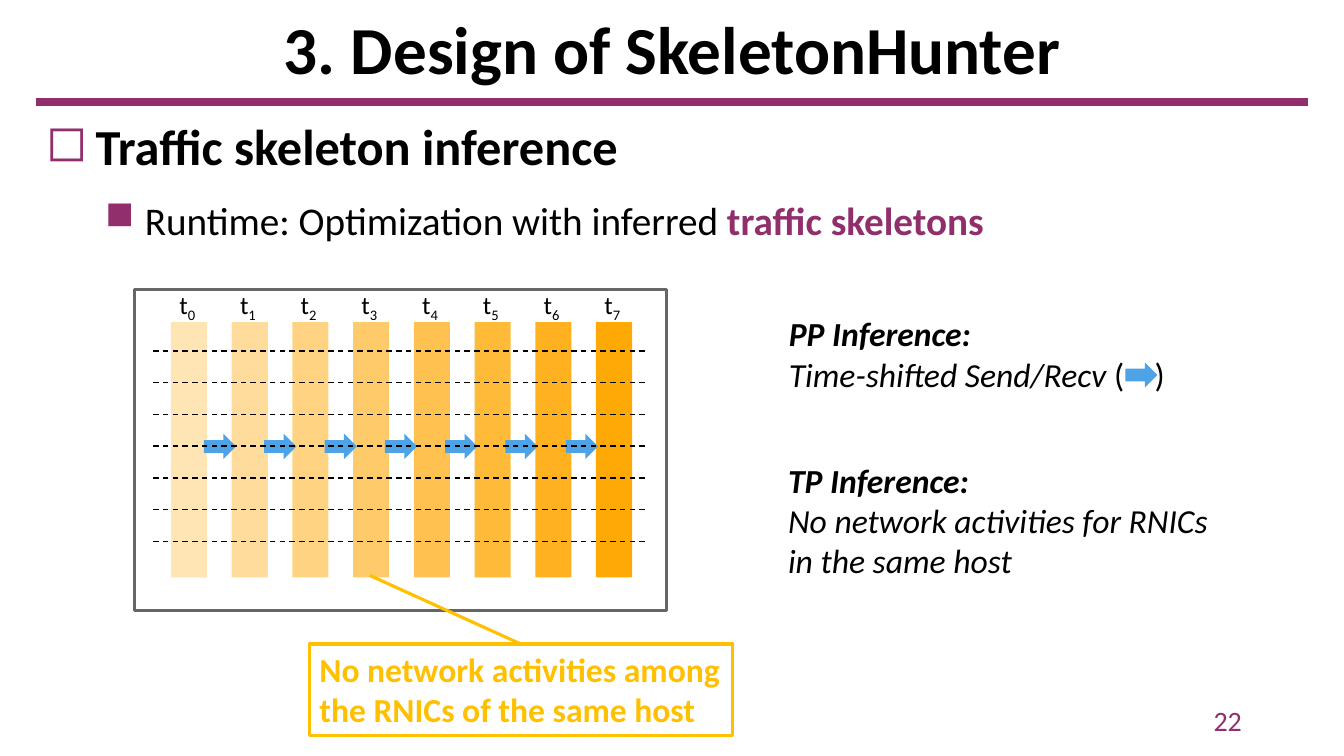
from lxml.etree import SubElement
from pptx import Presentation
from pptx.dml.color import RGBColor
from pptx.enum.dml import MSO_LINE
from pptx.enum.shapes import MSO_CONNECTOR, MSO_SHAPE
from pptx.enum.text import MSO_ANCHOR, PP_ALIGN
from pptx.oxml.ns import qn
from pptx.util import Cm, Pt

PURPLE, ORANGE, YELLOW, BLUE = "912F6C", "FFA907", "FFC000", "4EA2E6"
color = RGBColor.from_string

presentation = Presentation()
presentation.slide_width, presentation.slide_height = Cm(33.87), Cm(19.05)
slide = presentation.slides.add_slide(presentation.slide_layouts[6])


def add_text(bounds, paragraphs, size, text_color="000000", wrap=True):
    box = slide.shapes.add_textbox(*[Cm(length) for length in bounds])
    frame = box.text_frame
    frame.word_wrap = wrap
    frame.text = "\n".join("" for _ in paragraphs)
    for paragraph, runs in zip(frame.paragraphs, paragraphs):
        for text, style in runs:
            run = paragraph.add_run()
            run.text = text
            run.font.name, run.font.size = "Calibri", Pt(size)
            run.font.color.rgb = color(text_color)
            run.font.bold, run.font.italic = "b" in style, "i" in style
    return box


def add_line(start_x, start_y, end_x, end_y, line_color, width):
    line = slide.shapes.add_connector(
        MSO_CONNECTOR.STRAIGHT, Cm(start_x), Cm(start_y), Cm(end_x), Cm(end_y))
    line.line.color.rgb, line.line.width = color(line_color), Pt(width)
    SubElement(line._element.spPr, qn("a:effectLst"))
    return line


add_line(0.91, 2.57, 32.97, 2.57, PURPLE, 6)

title = add_text((2.34, 0, 29.21, 2.41), [[("3. Design of SkeletonHunter", "b")]], 48)
title.text_frame.vertical_anchor = MSO_ANCHOR.MIDDLE
title.text_frame.paragraphs[0].alignment = PP_ALIGN.CENTER

body = add_text((0.91, 2.95, 32.05, 15.42), [
    [("Traffic skeleton inference", "b")],
    [("Runtime: Optimization with inferred ", ""), ("traffic skeletons", "b")],
], 36)
heading, runtime = body.text_frame.paragraphs
for run in runtime.runs:
    run.font.size = Pt(28)
runtime.runs[1].font.color.rgb = color(PURPLE)
runtime.level = 1
for paragraph, bullet, margin, hanging, before, after in [
    (heading, "◻", 1.25, 1.25, 10, 12),
    (runtime, "■", 2.49, 1, 6, 6),
]:
    paragraph.line_spacing = 0.9
    paragraph.space_before, paragraph.space_after = Pt(before), Pt(after)
    properties = paragraph._p.get_or_add_pPr()
    properties.set("marL", str(Cm(margin)))
    properties.set("indent", str(-Cm(hanging)))
    SubElement(SubElement(properties, qn("a:buClr")), qn("a:srgbClr"), val=PURPLE)
    SubElement(properties, qn("a:buChar"), char=bullet)

number = add_text((23.93, 17.65, 7.62, 1.02), [[("22", "")]], 20, PURPLE)
number.text_frame.vertical_anchor = MSO_ANCHOR.MIDDLE
number.text_frame.paragraphs[0].alignment = PP_ALIGN.RIGHT

bars = [(MSO_SHAPE.RECTANGLE, 4.31 + 1.53 * step, 8.12, 0.91, 6.43, ORANGE, 30 + 10 * step)
        for step in range(8)]
arrows = [(MSO_SHAPE.RIGHT_ARROW, left, top, 0.81, 0.64, BLUE, 100)
          for left, top in [(5.14 + 1.52 * step, 10.93) for step in range(7)] + [(28.36, 9.13)]]
frame_box = (MSO_SHAPE.RECTANGLE, 3.4, 7.29, 13.39, 8.1, "FFFFFF", 100)
for kind, left, top, width, height, fill, opacity in [frame_box] + bars + arrows:
    shape = slide.shapes.add_shape(kind, Cm(left), Cm(top), Cm(width), Cm(height))
    shape.shadow.inherit = False
    shape.fill.solid()
    shape.fill.fore_color.rgb = color(fill)
    if fill == "FFFFFF":
        shape.line.color.rgb, shape.line.width = color("666666"), Pt(2)
    else:
        shape.line.fill.background()
    if opacity < 100:
        rgb = shape._element.spPr.find(qn("a:solidFill")).find(qn("a:srgbClr"))
        SubElement(rgb, qn("a:alpha"), val=str(opacity * 1000))

for row in range(7):
    top = 8.84 + 0.8 * row
    add_line(16.25, top, 3.83, top, "000000", 1).line.dash_style = MSO_LINE.DASH

for step in range(8):
    label = add_text((4.27 + 1.53 * step, 7.16, 0.94, 1.02),
                     [[("t", ""), (str(step), "")]], 18, wrap=False)
    subscript = label.text_frame.paragraphs[0].runs[1]
    subscript.font._element.set("baseline", "-25000")

pipeline = add_text((19.63, 7.77, 10.49, 2.31), [
    [("PP Inference:", "bi")],
    [("Time-shifted Send/Recv ", "i"), ("(", ""), (")", "")],
], 24)
opening = pipeline.text_frame.paragraphs[1].runs[1]
opening.font._element.set("spc", "2170")

add_text((19.61, 11.46, 11.48, 3.33), [
    [("TP Inference:", "bi")],
    [("No network activities for RNICs in the same host", "i")],
], 24)

callout = add_text((7.8, 16.23, 10.67, 2.31),
                   [[("No network activities among the RNICs of the same host", "b")]], 24, YELLOW)
callout.line.color.rgb, callout.line.width = color(YELLOW), Pt(2.25)
add_line(9.32, 14.5, 13.13, 16.23, YELLOW, 2.25)

presentation.save("out.pptx")
